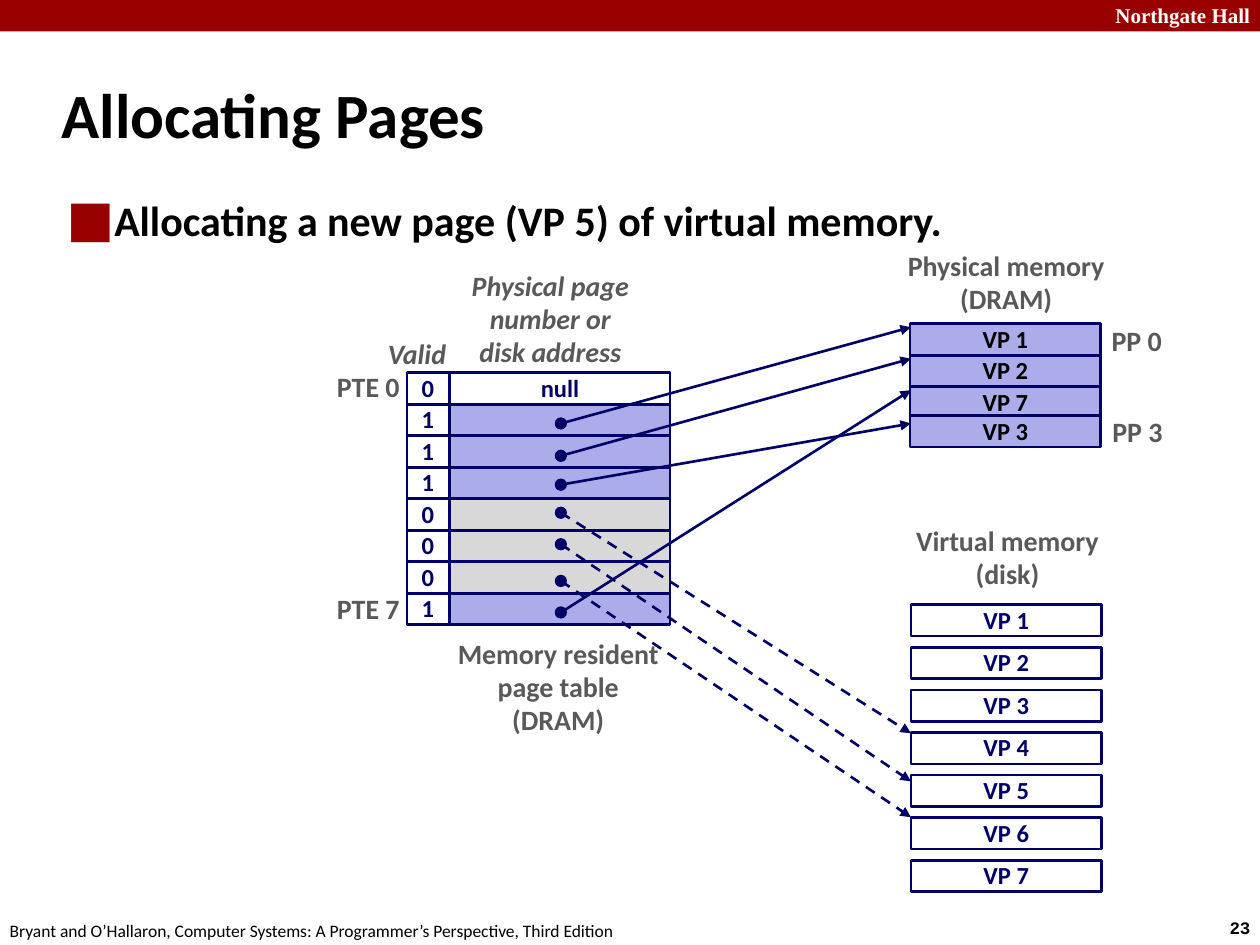
from lxml.etree import SubElement
from pptx import Presentation
from pptx.dml.color import RGBColor
from pptx.enum.dml import MSO_LINE
from pptx.enum.shapes import MSO_CONNECTOR, MSO_SHAPE
from pptx.enum.text import MSO_ANCHOR as Anchor, PP_ALIGN as Align
from pptx.oxml.ns import qn
from pptx.util import Pt

NAVY, LILAC, SILVER, WHITE = "000066", "ACACEA", "D8D8D8", "FFFFFF"
GREY, BLACK, RED = "595959", "000000", "990000"

TITLE = "Allocating Pages"
POINT = "Allocating a new page (VP 5) of virtual memory."

# valid bit, fill, dot centre y, arrow end y
ENTRIES = [
    ("0", WHITE, None, None),
    ("1", LILAC, 242, 187),
    ("1", LILAC, 260.5, 205),
    ("1", LILAC, 277, 242),
    ("0", SILVER, 293, 419),
    ("0", SILVER, 311, 446.5),
    ("0", SILVER, 332, 467),
    ("1", LILAC, 350, 223),
]
PHYSICAL = [("VP 1", 185), ("VP 2", 203), ("VP 7", 221), ("VP 3", 237.5)]
VIRTUAL = [f"VP {n}" for n in range(1, 8)]

# text, left, top, width, height, italic, alignment
LABELS = [
    ("Physical page\nnumber or\ndisk address", 262, 150.5, 105, 64, True, Align.CENTER),
    ("Valid", 214.5, 189.5, 54, 26.5, True, Align.LEFT),
    ("PTE 0", 185, 208, 50.5, 26.5, False, Align.RIGHT),
    ("PTE 7", 185, 335, 50.5, 26.5, False, Align.RIGHT),
    ("Memory resident\npage table\n(DRAM)", 252.5, 361, 133, 64, False, Align.CENTER),
    ("Physical memory\n(DRAM)", 511, 139, 128, 45.5, False, Align.CENTER),
    ("Virtual memory\n(disk)", 515, 296, 121.5, 45.5, False, Align.CENTER),
    ("PP 0", 628, 182, 43, 26.5, False, Align.CENTER),
    ("PP 3", 628.5, 234, 43, 26.5, False, Align.CENTER),
]

ROW = 18
BIT_X, BIT_W = 232.5, 24
PAGE_X, PAGE_W, PAGE_Y = 257, 126, 213
DOT_X, DOT = 320.5, 6
MEM_X, MEM_W = 520, 109
DISK_Y, DISK_STEP = 345.5, 24.35


def rgb(code):
    return RGBColor.from_string(code)


def write(shape, text, size=14, color=NAVY, bold=True, italic=False,
          font="Calibri", align=Align.CENTER, anchor=Anchor.MIDDLE,
          space=0.98, wrap=False):
    frame = shape.text_frame
    frame.text = text
    frame.word_wrap = wrap
    frame.vertical_anchor = anchor
    for para in frame.paragraphs:
        para.alignment = align
        para.line_spacing = space
        for run in para.runs:
            face = run.font
            face.name, face.size = font, Pt(size)
            face.bold, face.italic = bold, italic
            face.color.rgb = rgb(color)


def label(text, x, y, w, h, **style):
    box = slide.shapes.add_textbox(Pt(x), Pt(y), Pt(w), Pt(h))
    write(box, text, **style)
    return box


def block(x, y, w, h, fill, line=NAVY, width=1.5, kind=MSO_SHAPE.RECTANGLE):
    shape = slide.shapes.add_shape(kind, Pt(x), Pt(y), Pt(w), Pt(h))
    shape.shadow.inherit = False
    shape.fill.solid()
    shape.fill.fore_color.rgb = rgb(fill)
    if line:
        shape.line.color.rgb = rgb(line)
        shape.line.width = Pt(width)
    else:
        shape.line.fill.background()
    return shape


def arrow(x1, y1, x2, y2, dash):
    link = slide.shapes.add_connector(
        MSO_CONNECTOR.STRAIGHT, Pt(x1), Pt(y1), Pt(x2), Pt(y2))
    link.line.color.rgb = rgb(NAVY)
    link.line.width = Pt(1.5)
    if dash:
        link.line.dash_style = MSO_LINE.DASH
    SubElement(link.line._get_or_add_ln(), qn("a:tailEnd"), type="triangle")
    SubElement(link._element.spPr, qn("a:effectLst"))


def bullet(para, mark, color, indent, scale):
    """Hang a coloured mark; scale is its size in percent of the text."""
    props = para._p.get_or_add_pPr()
    props.set("marL", str(Pt(indent)))
    props.set("indent", str(-Pt(indent)))
    tint = SubElement(props, qn("a:buClr"))
    SubElement(tint, qn("a:srgbClr"), val=color)
    SubElement(props, qn("a:buSzPct"), val=str(scale * 1000))
    SubElement(props, qn("a:buFont"), typeface="Calibri")
    SubElement(props, qn("a:buChar"), char=mark)


deck = Presentation()
deck.slide_width, deck.slide_height = Pt(720), Pt(540)
slide = deck.slides.add_slide(deck.slide_layouts[5])

# Banner and footer
block(0, 0, 720, 18, RED, line=None)
label("Northgate Hall", 618.5, -2, 103, 21.5, size=12, color=WHITE, wrap=True,
      font="Times New Roman", align=Align.RIGHT, anchor=Anchor.TOP, space=1)
label("23", 695.5, 520.5, 32.5, 19.5, size=10, color=BLACK,
      font="Courier New", align=Align.LEFT, anchor=Anchor.TOP, space=1)
label("Bryant and O’Hallaron, Computer Systems: A Programmer’s Perspective, Third Edition",
      -1.5, 522, 366, 19.5, size=10, color=BLACK, bold=False,
      align=Align.LEFT, anchor=Anchor.TOP, space=1)

# Heading and main point
title = slide.shapes.title
title.left, title.top, title.width, title.height = Pt(28), Pt(34.5), Pt(598), Pt(60)
write(title, TITLE, size=36, color=BLACK, align=Align.LEFT, space=1, wrap=True)
body = label(POINT, 31, 107.5, 622, 391.5, size=24, color=BLACK,
             align=Align.LEFT, anchor=Anchor.TOP, space=1, wrap=True)
bullet(body.text_frame.paragraphs[0], "■", RED, indent=27, scale=120)

# Page table
for i, (bit, fill, dot_y, end_y) in enumerate(ENTRIES):
    y = PAGE_Y + i * ROW
    write(block(BIT_X, y, BIT_W, ROW, WHITE), bit)
    page = block(PAGE_X, y, PAGE_W, ROW, fill)
    if dot_y is None:
        write(page, "null")

# Physical and virtual memory
for name, y in PHYSICAL:
    write(block(MEM_X, y, MEM_W, ROW, LILAC), name, color=BLACK)
for i, name in enumerate(VIRTUAL):
    write(block(MEM_X + 0.5, DISK_Y + i * DISK_STEP, MEM_W, ROW, WHITE), name)

for text, x, y, w, h, italic, align in LABELS:
    label(text, x, y, w, h, size=16, color=GREY, italic=italic, align=align)

# Pointers: solid to physical memory, dashed to disk
for bit, fill, dot_y, end_y in ENTRIES:
    if dot_y is not None:
        arrow(DOT_X, dot_y, MEM_X + 0.5, end_y, dash=bit == "0")
        block(DOT_X - DOT / 2, dot_y - DOT / 2, DOT, DOT, NAVY,
              width=1, kind=MSO_SHAPE.OVAL)

deck.save("out.pptx")
